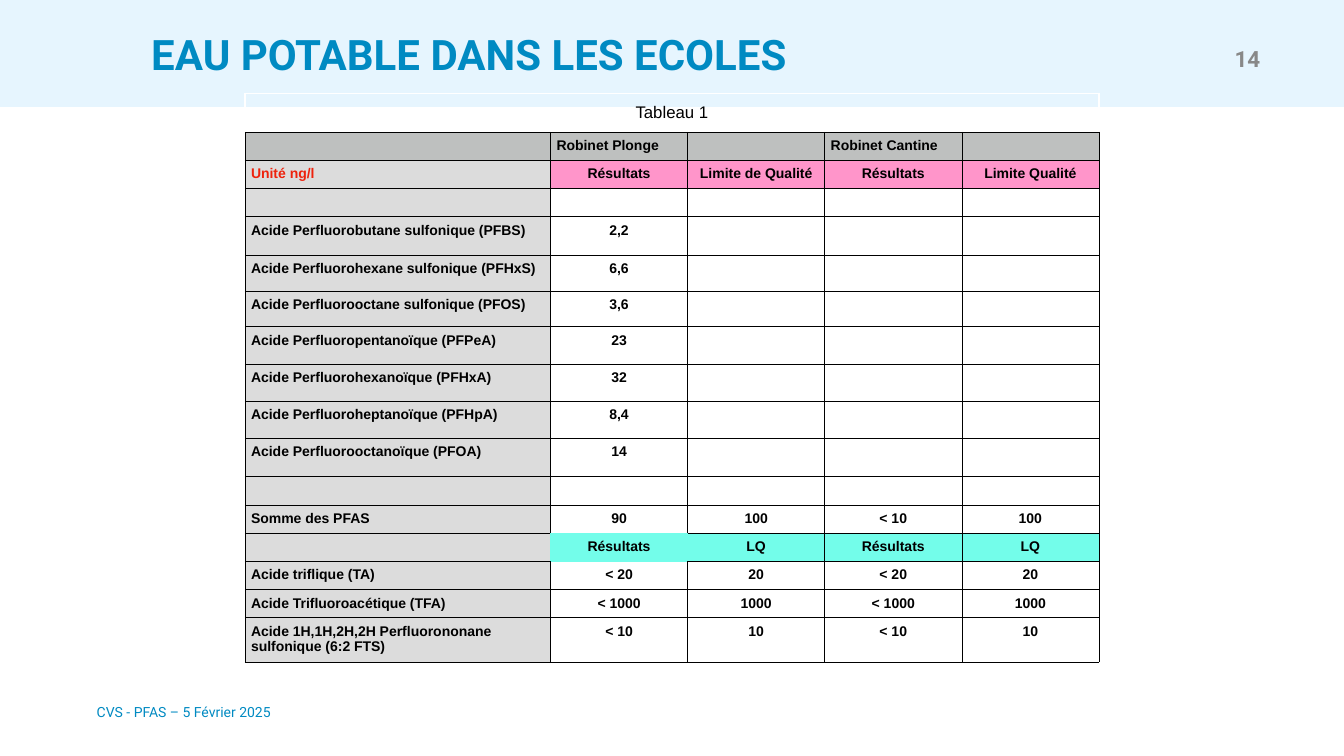
from lxml import etree
from pptx import Presentation
from pptx.dml.color import RGBColor
from pptx.enum.shapes import MSO_SHAPE
from pptx.enum.text import MSO_ANCHOR, PP_ALIGN
from pptx.oxml.ns import qn
from pptx.util import Inches, Pt

RECTANGLE = MSO_SHAPE.RECTANGLE
TOP, MIDDLE = MSO_ANCHOR.TOP, MSO_ANCHOR.MIDDLE
LEFT, CENTER, RIGHT = PP_ALIGN.LEFT, PP_ALIGN.CENTER, PP_ALIGN.RIGHT

BLACK = RGBColor(0x00, 0x00, 0x00)
WHITE = RGBColor(0xFF, 0xFF, 0xFF)
PALE_BLUE = RGBColor(0xE6, 0xF5, 0xFE)
BLUE = RGBColor(0x00, 0x8A, 0xC2)
GREY = RGBColor(0x88, 0x88, 0x88)
HEADER_GREY = RGBColor(0xBE, 0xC0, 0xBF)
LABEL_GREY = RGBColor(0xDC, 0xDC, 0xDC)
RED = RGBColor(0xEE, 0x22, 0x0C)
PINK = RGBColor(0xFF, 0x95, 0xCA)
CYAN = RGBColor(0x73, 0xFD, 0xEA)

THIN, THICK = 0.35, 0.75
COL_WIDTHS = [3.03] + [1.36] * 4
ROWS = [
    (0.38, ["Tableau 1"]),
    (0.28, ["", "Robinet Plonge", "", "Robinet Cantine"]),
    (0.28, ["Unité ng/l", "Résultats", "Limite de Qualité", "Résultats", "Limite Qualité"]),
    (0.28, []),
    (0.38, ["Acide Perfluorobutane sulfonique (PFBS)", "2,2"]),
    (0.36, ["Acide Perfluorohexane sulfonique (PFHxS)", "6,6"]),
    (0.35, ["Acide Perfluorooctane sulfonique (PFOS)", "3,6"]),
    (0.37, ["Acide Perfluoropentanoïque (PFPeA)", "23"]),
    (0.37, ["Acide Perfluorohexanoïque (PFHxA)", "32"]),
    (0.37, ["Acide Perfluoroheptanoïque (PFHpA)", "8,4"]),
    (0.38, ["Acide Perfluorooctanoïque (PFOA)", "14"]),
    (0.28, []),
    (0.28, ["Somme des PFAS", "90", "100", "< 10", "100"]),
    (0.28, ["", "Résultats", "LQ", "Résultats", "LQ"]),
    (0.28, ["Acide triflique (TA)", "< 20", "20", "< 20", "20"]),
    (0.28, ["Acide Trifluoroacétique (TFA)", "< 1000", "1000", "< 1000", "1000"]),
    (0.44, ["Acide 1H,1H,2H,2H Perfluorononane sulfonique (6:2 FTS)",
            "< 10", "10", "< 10", "10"]),
]
CAPTION, TAPS, UNITS, LIMITS = 0, 1, 2, 13


def style(p, size, color, name, bold=False, align=LEFT):
    p.alignment = align
    p.font.size = Pt(size)
    p.font.name = name
    p.font.bold = bold
    p.font.color.rgb = color


def write(s, text, inset, anchor, **font):
    tf = s.text_frame
    tf.margin_left = tf.margin_right = Inches(inset)
    tf.margin_top = tf.margin_bottom = Inches(inset)
    tf.vertical_anchor = anchor
    tf.word_wrap = True
    tf.text = text
    style(tf.paragraphs[0], name="Roboto", **font)


def add_band(slide):
    s = slide.shapes.add_shape(RECTANGLE, 0, 0, Inches(13.33), Inches(1.06))
    s.shadow.inherit = False
    s.fill.solid()
    s.fill.fore_color.rgb = PALE_BLUE
    s.line.fill.background()


def add_title(slide, text):
    s = slide.shapes.title
    s.left, s.top, s.width, s.height = map(Inches, (1.5, 0.28, 7.02, 0.5))
    write(s, text, 0, TOP, size=30, color=BLUE, bold=True)
    tree = slide.shapes.element
    tree.remove(s.element)
    tree.append(s.element)


def add_text(slide, box, text, inset, **font):
    s = slide.shapes.add_textbox(*map(Inches, box))
    write(s, text, inset, MIDDLE, **font)


def set_borders(cell, borders):
    tc_pr = cell._tc.get_or_add_tcPr()
    for side in "LRTB":
        color, width = borders[side]
        ln = etree.SubElement(tc_pr, qn("a:ln" + side), w=str(Pt(width)))
        fill = etree.SubElement(ln, qn("a:solidFill"))
        etree.SubElement(fill, qn("a:srgbClr"), val=str(color))


def cell_borders(row, col):
    borders = dict.fromkeys("LRTB", (BLACK, THIN))
    if row == CAPTION:
        borders.update(dict.fromkeys("LRT", (WHITE, 1)))
    elif row == TAPS:
        borders["B"] = (BLACK, THICK)
    else:
        if row == UNITS:
            borders["T"] = (BLACK, THICK)
        if col < 2:
            edge = CYAN if row == LIMITS else BLACK
            borders["R" if col == 0 else "L"] = (edge, THICK)
    if col == 1:
        if row == LIMITS:
            borders.update(dict.fromkeys("RTB", (CYAN, THIN)))
        elif row == LIMITS - 1:
            borders["B"] = (CYAN, THIN)
        elif row == LIMITS + 1:
            borders["T"] = (CYAN, THIN)
    elif (row, col) == (LIMITS, 2):
        borders["L"] = (CYAN, THIN)
    return borders


def cell_fill(row, col):
    if row == CAPTION:
        return None
    if row == TAPS:
        return HEADER_GREY
    if col == 0:
        return LABEL_GREY
    return {UNITS: PINK, LIMITS: CYAN}.get(row)


def format_cell(cell, row, col, text):
    set_borders(cell, cell_borders(row, col))
    color = cell_fill(row, col)
    if color is None:
        cell.fill.background()
    else:
        cell.fill.solid()
        cell.fill.fore_color.rgb = color
    cell.margin_left = cell.margin_right = Inches(0.06)
    cell.margin_top = cell.margin_bottom = Inches(0.06 if text else 0)
    if text:
        cell.text = text
    p = cell.text_frame.paragraphs[0]
    if not text:
        etree.SubElement(p._p, qn("a:endParaRPr"), sz="1000")
    if row == CAPTION:
        cell.vertical_anchor = MIDDLE
        style(p, 12, BLACK, "Arial", align=CENTER)
    else:
        centred = col > 0 and row != TAPS
        style(p, 10, RED if (row, col) == (UNITS, 0) else BLACK, "Arial",
              bold=True, align=CENTER if centred else LEFT)


def add_results_table(slide):
    heights = [height for height, _ in ROWS]
    box = (2.43, 0.93, sum(COL_WIDTHS), sum(heights))
    table = slide.shapes.add_table(len(ROWS), len(COL_WIDTHS), *map(Inches, box)).table
    table.first_row = table.horz_banding = False
    for column, width in zip(table.columns, COL_WIDTHS):
        column.width = Inches(width)
    for row, (height, texts) in enumerate(ROWS):
        table.rows[row].height = Inches(height)
        for col in range(len(COL_WIDTHS)):
            text = texts[col] if col < len(texts) else ""
            format_cell(table.cell(row, col), row, col, text)
    table.cell(CAPTION, 0).merge(table.cell(CAPTION, len(COL_WIDTHS) - 1))


def main():
    prs = Presentation()
    prs.slide_width, prs.slide_height = Inches(13.33), Inches(7.5)
    slide = prs.slides.add_slide(prs.slide_layouts[5])
    add_band(slide)
    add_text(slide, (12.09, 0.4, 0.46, 0.36), "14", 0.05,
             size=16, color=GREY, bold=True, align=RIGHT)
    add_text(slide, (0.96, 6.98, 5.43, 0.17), "CVS - PFAS – 5 Février 2025", 0,
             size=10, color=BLUE)
    add_title(slide, "EAU POTABLE DANS LES ECOLES")
    add_results_table(slide)
    prs.save("out.pptx")


if __name__ == "__main__":
    main()
